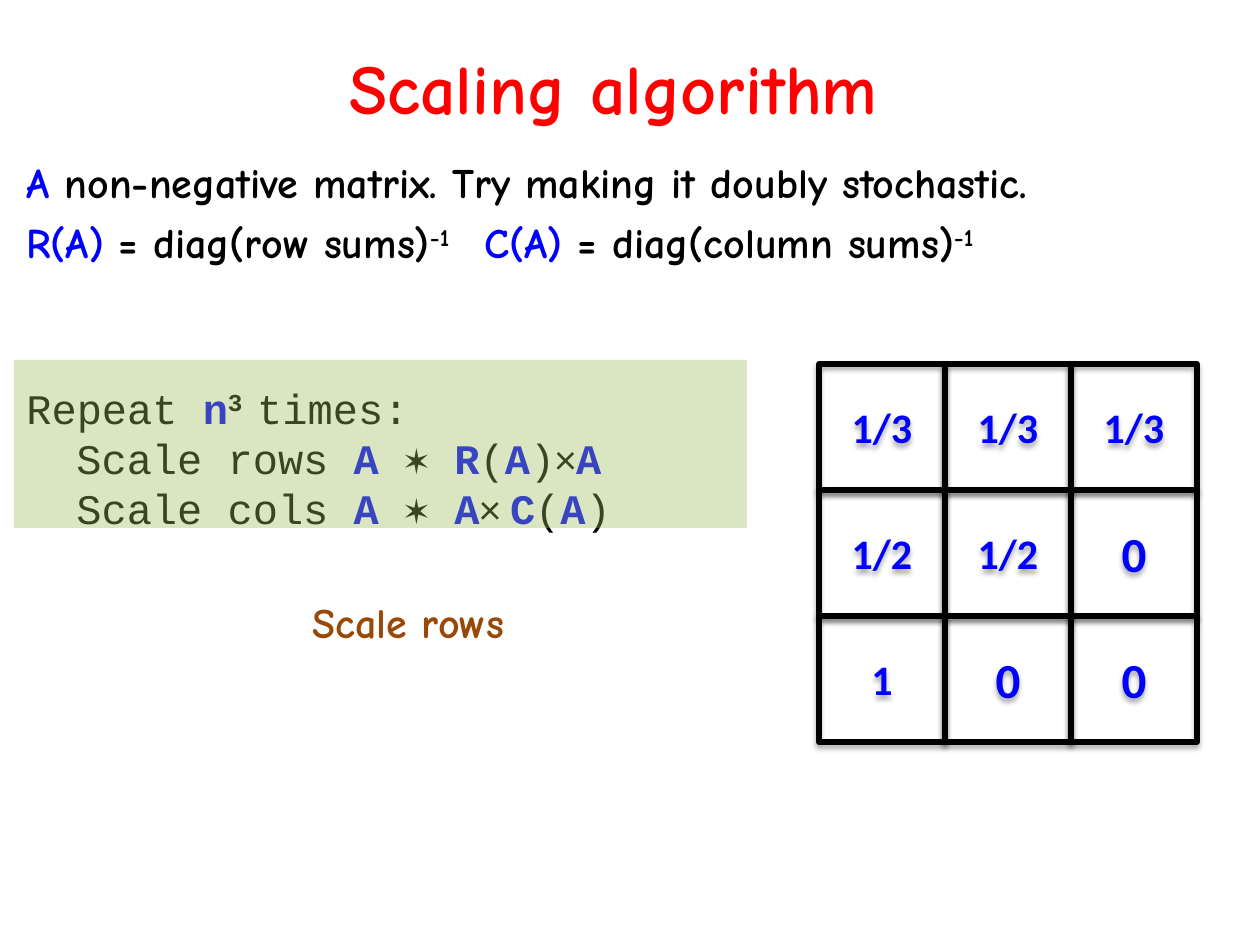
from dataclasses import dataclass
from lxml.etree import SubElement
from pptx import Presentation
from pptx.dml.color import RGBColor
from pptx.enum.shapes import MSO_SHAPE as Shape
from pptx.enum.text import MSO_ANCHOR as Anchor, PP_ALIGN as Align
from pptx.oxml import parse_xml
from pptx.oxml.ns import nsdecls, qn
from pptx.util import Pt


@dataclass(frozen=True)
class Theme:
    red: str = "FF0000"
    blue: str = "0000FF"
    black: str = "000000"
    brown: str = "984807"
    green: str = "9BBB59"
    hand: str = "Comic Neue"
    mono: str = "Courier New"
    sans: str = "Calibri"
    title: int = 40
    body: int = 24
    zero: int = 28


T = Theme()
PX = 914400 // 126

# Content: each line is a list of (text, style) runs
STYLES = {  # font, colour, bold, baseline
    "title": (T.hand, T.red, True, 0),
    "note": (T.hand, T.brown, True, 0),
    "text": (T.hand, T.black, True, 0),
    "name": (T.hand, T.blue, True, 0),
    "power": (T.hand, T.black, True, 30000),
    "code": (T.mono, T.black, False, 0),
    "var": (T.mono, T.blue, True, 0),
    "exp": (T.mono, T.black, True, 30000),
    "times": (T.sans, T.black, False, 0),
    "entry": (T.sans, T.blue, True, 0),
}
TITLE = [[("Scaling algorithm", "title")]]
INTRO = [
    [("A", "name"), (" non-negative matrix. Try making it doubly stochastic.", "text")],
    [("R(A)", "name"), (" = diag(row sums)", "text"), ("-1\t", "power"),
     ("C(A)", "name"), (" = diag(column sums)", "text"), ("-1", "power")],
]
LOOP = [[("Repeat ", "code"), ("n", "var"), ("3 ", "exp"), ("times:", "code")]]
STEPS = [
    [("Scale rows ", "code"), ("A", "var"), (" ✶ ", "code"), ("R", "var"), ("(", "code"),
     ("A", "var"), (")", "code"), ("×", "times"), ("A", "var")],
    [("Scale cols ", "code"), ("A", "var"), (" ✶ ", "code"), ("A", "var"), ("× ", "times"),
     ("C", "var"), ("(", "code"), ("A", "var"), (")", "code")],
]
NOTE = [[("Scale rows", "note")]]
MATRIX = [("1/3", "1/3", "1/3"), ("1/2", "1/2", "0"), ("1", "0", "0")]

# Layout in px
TITLE_BOX = (78, -15, 1071, 203)
INTRO_BOX = (14, 140, 1230, 134)
LOOP_BOX = (14, 376, 733, 60)
STEPS_BOX = (64, 426, 683, 113)
PANEL = (14, 360, 733, 168)
NOTE_BOX = (300, 590, 246, 63)
GRID_LEFT, GRID_TOP, CELL = 819, 364, 126
TAB = 458


def emu(box):
    return [v * PX for v in box]


def write(tf, lines, size, align=Align.LEFT, spacing=1.0):
    tf.word_wrap = True
    for i, line in enumerate(lines):
        p = tf.paragraphs[0] if i == 0 else tf.add_paragraph()
        p.alignment, p.line_spacing = align, spacing
        for text, style in line:
            font, colour, bold, baseline = STYLES[style]
            r = p.add_run()
            r.text = text
            r.font.name, r.font.size, r.font.bold = font, Pt(size), bold
            r.font.color.rgb = RGBColor.from_string(colour)
            if baseline:
                r.font._element.set("baseline", str(baseline))


def text_box(s, box, lines, size=T.body, **kw):
    tf = s.shapes.add_textbox(*emu(box)).text_frame
    write(tf, lines, size, **kw)
    return tf


def add_shadow(sp):
    sp._element.spPr.append(parse_xml(
        f'<a:effectLst {nsdecls("a")}><a:outerShdw blurRad="{Pt(3.1)}" dist="{Pt(1.8)}" '
        f'dir="5400000" rotWithShape="0"><a:srgbClr val="{T.black}"><a:alpha val="35000"/>'
        '</a:srgbClr></a:outerShdw></a:effectLst>'))


def matrix_cell(s, row, col, value):
    box = (GRID_LEFT + col * CELL, GRID_TOP + row * CELL, CELL, CELL)
    sp = s.shapes.add_shape(Shape.RECTANGLE, *emu(box))
    sp.fill.background()
    sp.line.color.rgb = RGBColor.from_string(T.black)
    sp.line.width = Pt(3)
    add_shadow(sp)
    sp.text_frame.vertical_anchor = Anchor.MIDDLE
    write(sp.text_frame, [[(value, "entry")]], T.zero if value == "0" else T.body, Align.CENTER)


def code_panel(s):
    sp = s.shapes.add_shape(Shape.RECTANGLE, *emu(PANEL))
    sp.shadow.inherit = False
    sp.fill.solid()
    sp.fill.fore_color.rgb = RGBColor.from_string(T.green)
    colour = sp._element.spPr.find(qn("a:solidFill"))[0]
    SubElement(colour, qn("a:alpha")).set("val", "37000")
    sp.line.fill.background()


def main():
    prs = Presentation()
    prs.slide_width, prs.slide_height = 1260 * PX, 945 * PX
    s = prs.slides.add_slide(prs.slide_layouts[6])

    # Title and definitions
    text_box(s, TITLE_BOX, TITLE, T.title, align=Align.CENTER).vertical_anchor = Anchor.MIDDLE
    intro = text_box(s, INTRO_BOX, INTRO, spacing=1.2)
    tabs = SubElement(intro.paragraphs[1]._p.get_or_add_pPr(), qn("a:tabLst"))
    SubElement(tabs, qn("a:tab"), pos=str(TAB * PX), algn="l")

    # Algorithm, under a translucent panel
    text_box(s, LOOP_BOX, LOOP)
    text_box(s, STEPS_BOX, STEPS)

    # Matrix
    for row, values in enumerate(MATRIX):
        for col, value in enumerate(values):
            matrix_cell(s, row, col, value)

    code_panel(s)
    text_box(s, NOTE_BOX, NOTE)
    prs.save("out.pptx")


if __name__ == "__main__":
    main()
